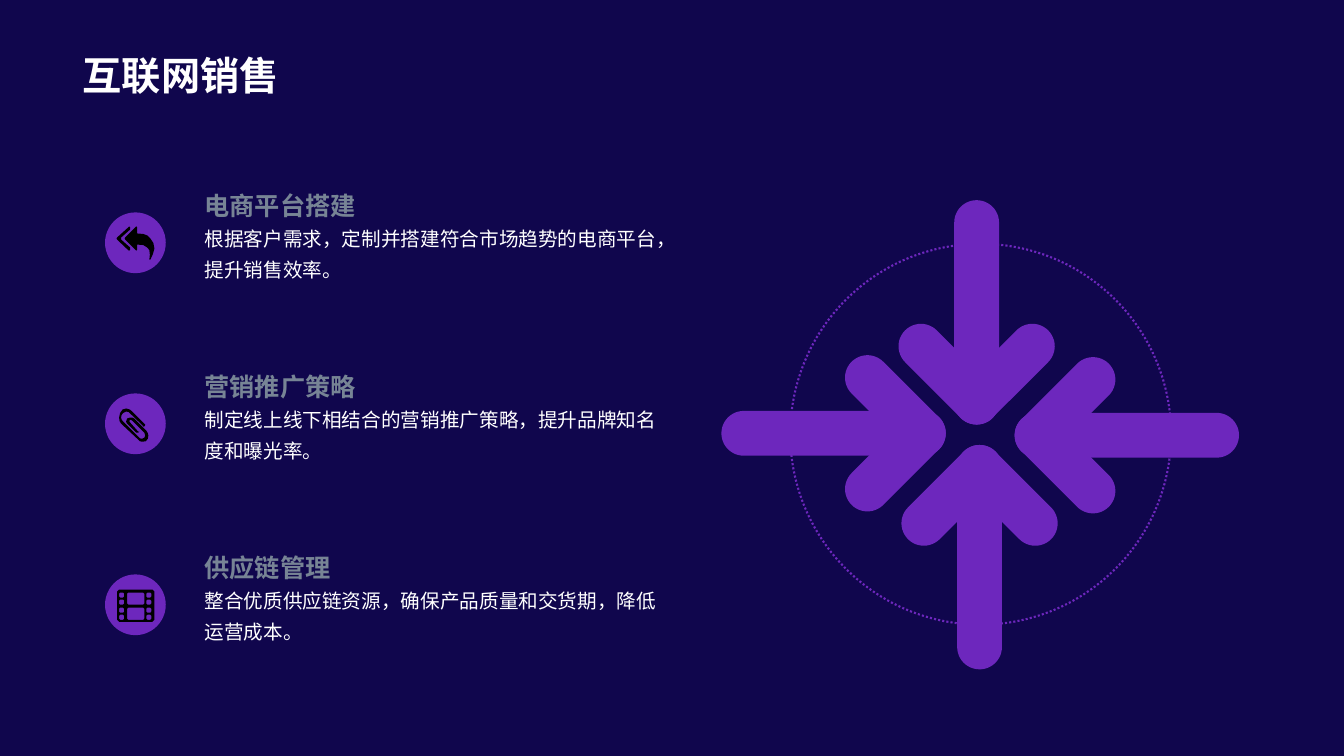
from math import cos, radians, sin

from lxml.etree import SubElement
from pptx import Presentation
from pptx.dml.color import RGBColor
from pptx.enum.dml import MSO_LINE
from pptx.enum.shapes import MSO_SHAPE
from pptx.enum.text import MSO_ANCHOR, MSO_AUTO_SIZE, PP_ALIGN
from pptx.oxml.ns import qn
from pptx.util import Pt

NAVY = RGBColor(0x10, 0x06, 0x4D)
PURPLE = RGBColor(0x6D, 0x27, 0xBD)
SLATE = RGBColor(0x77, 0x84, 0x95)
WHITE = RGBColor(0xFF, 0xFF, 0xFF)
BLACK = RGBColor(0x00, 0x00, 0x00)
FONT = "Noto Sans CJK JP"

ICON_UNIT = Pt(0.36)
DISC_SIZE = 43.4
ROW_PITCH = 129.3
BAR_WIDTH = 32
SHAFT_LENGTH = 160
BARB_LENGTH = 88.5


def chamfered(left, top, right, bottom, cut):
    return [
        (left + cut, top), (right - cut, top), (right, top + cut), (right, bottom - cut),
        (right - cut, bottom), (left + cut, bottom), (left, bottom - cut), (left, top + cut),
    ]


REPLY_ICON = [
    [(50, 74), (48, 76), (46, 75), (24, 54), (23, 52), (24, 50), (46, 30), (48, 28),
     (50, 30), (50, 34), (32, 50), (32, 54), (50, 70)],
    [(90, 94), (88, 94), (89, 84), (88, 75), (84, 70), (76, 65), (64, 64), (64, 74),
     (62, 76), (60, 74), (40, 54), (39, 52), (40, 50), (60, 30), (62, 28), (64, 30),
     (64, 42), (76, 43), (84, 46), (90, 52), (96, 61), (98, 72), (95, 83)],
]
CLIP_ICON = [
    [(74, 96), (69, 95), (64, 90), (32, 60), (29, 55), (28, 48), (30, 39), (35, 32),
     (42, 30), (49, 32), (54, 36), (80, 62), (79, 65), (76, 66), (75, 64), (50, 40),
     (47, 37), (42, 36), (36, 39), (33, 43), (32, 48), (33, 52), (36, 56), (68, 88),
     (71, 90), (74, 90), (78, 88), (80, 84), (79, 81), (78, 78), (54, 54), (50, 52),
     (48, 55), (50, 58), (66, 76), (68, 76), (66, 78), (62, 78), (46, 62), (43, 59),
     (42, 56), (44, 50), (50, 48), (54, 48), (58, 50), (82, 74), (85, 79), (86, 84),
     (85, 90), (81, 95)],
]
FILM_ICON = [
    chamfered(24, 30, 98, 94, 4),
    *[chamfered(44, top, 78, top + 24, 2) for top in (36, 66)],
    *[chamfered(left, top, left + 10, top + 10, 2)
      for left in (28, 82) for top in (36, 50, 66, 80)],
]

SERVICES = [
    (REPLY_ICON, "电商平台搭建", "根据客户需求，定制并搭建符合市场趋势的电商平台，提升销售效率。"),
    (CLIP_ICON, "营销推广策略", "制定线上线下相结合的营销推广策略，提升品牌知名度和曝光率。"),
    (FILM_ICON, "供应链管理", "整合优质供应链资源，确保产品质量和交货期，降低运营成本。"),
]
ARROWS = [(90, -2.9, -7.2), (180, 24.5, 0.7), (0, -25.2, -0.7), (270, -0.8, 7.9)]


def paint(shape, color):
    shape.shadow.inherit = False
    shape.fill.solid()
    shape.fill.fore_color.rgb = color
    shape.line.fill.background()


def write(text_frame, text, size, color, bold=False):
    text_frame.text = text
    text_frame.word_wrap = True
    paragraph = text_frame.paragraphs[0]
    paragraph.alignment = PP_ALIGN.LEFT
    run = paragraph.runs[0]
    run.font.name = FONT
    run.font.size = Pt(size)
    run.font.bold = bold
    run.font.color.rgb = color
    SubElement(run._r.get_or_add_rPr(), qn("a:ea")).set("typeface", FONT)
    return paragraph


def add_title(slide, left, top, width, height):
    title = slide.shapes.title
    title.left, title.top, title.width, title.height = map(Pt, (left, top, width, height))
    write(title.text_frame, "互联网销售", 28, WHITE, bold=True)
    title.text_frame.vertical_anchor = MSO_ANCHOR.BOTTOM
    title.text_frame.auto_size = MSO_AUTO_SIZE.SHAPE_TO_FIT_TEXT


def add_icon(slide, contours, left, top):
    first, *others = contours
    builder = slide.shapes.build_freeform(*first[0], scale=ICON_UNIT)
    builder.add_line_segments(first[1:], close=True)
    for contour in others:
        builder.move_to(*contour[0])
        builder.add_line_segments(contour[1:], close=True)
    paint(builder.convert_to_shape(Pt(left), Pt(top)), BLACK)


def add_service(slide, service, left, top, width):
    icon, heading, description = service
    disc_top = top + 19.4
    disc = slide.shapes.add_shape(
        MSO_SHAPE.OVAL, Pt(left), Pt(disc_top), Pt(DISC_SIZE), Pt(DISC_SIZE))
    paint(disc, PURPLE)
    add_icon(slide, icon, left, disc_top)

    text_left, text_width = Pt(left + 64), Pt(width - 64)
    heading_box = slide.shapes.add_textbox(text_left, Pt(top), text_width, Pt(31))
    write(heading_box.text_frame, heading, 18, SLATE, bold=True)
    body_box = slide.shapes.add_textbox(text_left, Pt(top + 21.2), text_width, Pt(88.6))
    write(body_box.text_frame, description, 14, WHITE).line_spacing = 1.3


def add_services(slide, left, top, width):
    for index, service in enumerate(SERVICES):
        add_service(slide, service, left, top + index * ROW_PITCH, width)


def add_arrow(slide, tip_x, tip_y, heading):
    group = slide.shapes.add_group_shape()
    forward_x, forward_y = cos(radians(heading)), sin(radians(heading))
    bars = [
        (SHAFT_LENGTH, SHAFT_LENGTH / 2, 0, 0),
        (BARB_LENGTH, 35.7, -19.8, 45),
        (BARB_LENGTH, 35.7, 19.8, -45),
    ]
    for length, back, side, turn in bars:
        center_x = tip_x - back * forward_x - side * forward_y
        center_y = tip_y - back * forward_y + side * forward_x
        bar = group.shapes.add_shape(
            MSO_SHAPE.ROUNDED_RECTANGLE, Pt(center_x - length / 2),
            Pt(center_y - BAR_WIDTH / 2), Pt(length), Pt(BAR_WIDTH))
        bar.adjustments[0] = 0.5
        bar.rotation = (heading + turn) % 360
        paint(bar, PURPLE)


def add_target(slide, left, top, size):
    ring = slide.shapes.add_shape(MSO_SHAPE.OVAL, Pt(left), Pt(top), Pt(size), Pt(size))
    ring.shadow.inherit = False
    ring.fill.background()
    ring.line.color.rgb = PURPLE
    ring.line.width = Pt(1.5)
    ring.line.dash_style = MSO_LINE.ROUND_DOT
    for heading, tip_x, tip_y in ARROWS:
        add_arrow(slide, left + size / 2 + tip_x, top + size / 2 + tip_y, heading)


def main():
    presentation = Presentation()
    presentation.slide_width, presentation.slide_height = Pt(960), Pt(540)
    slide = presentation.slides.add_slide(presentation.slide_layouts[5])
    slide.background.fill.solid()
    slide.background.fill.fore_color.rgb = NAVY
    add_target(slide, 564.5, 174.2, 272)
    add_services(slide, 75, 132.3, 404)
    add_title(slide, 52, 33, 840, 41)
    presentation.save("out.pptx")


if __name__ == "__main__":
    main()
